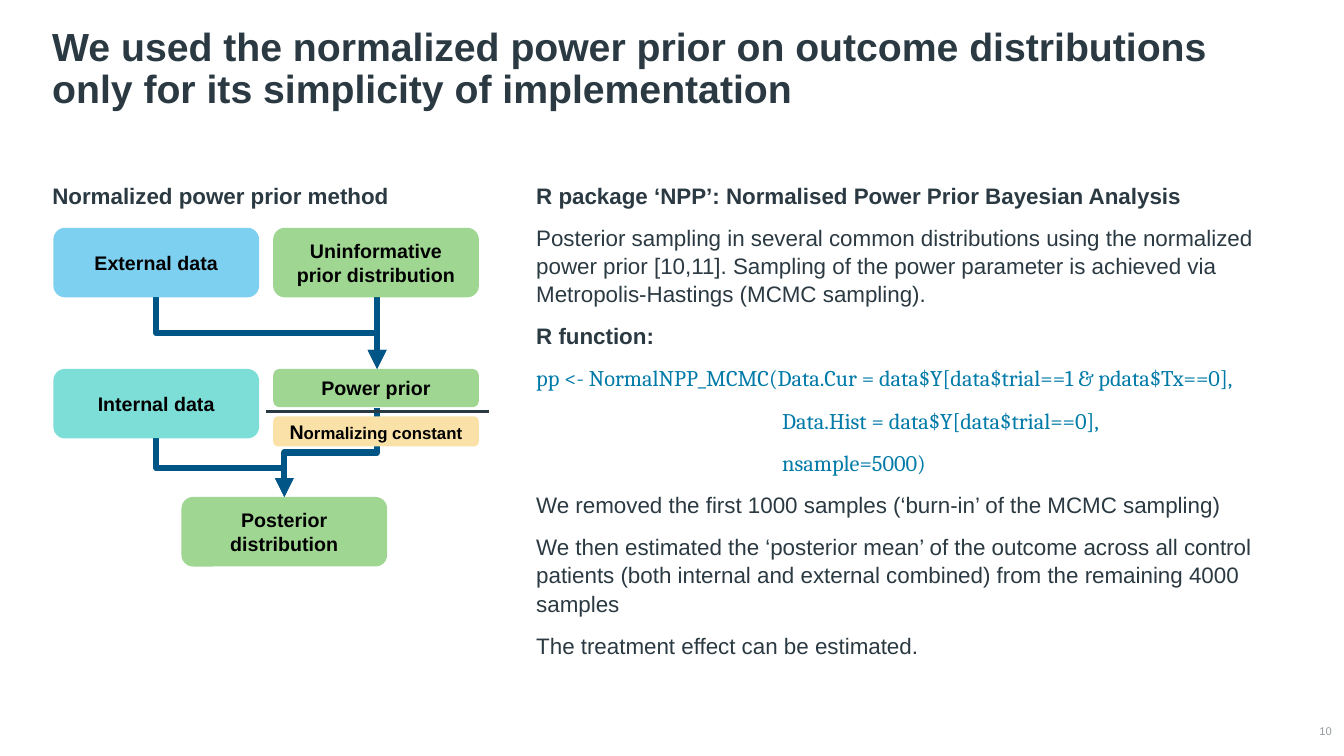
from typing import NamedTuple

from lxml import etree
from pptx import Presentation
from pptx import util as u
from pptx.dml.color import RGBColor
from pptx.enum import shapes, text
from pptx.oxml.ns import qn

INK, CODE, ARROW = "2B3A42", "007AA8", "005587"
BLUE, GREEN, TEAL, SAND = "00A3E0", "43B02A", "00BFB3", "F9E1A7"
BOX_WIDTH, BOX_HEIGHT = 2.04, 0.69
LEFT_COLUMN, RIGHT_COLUMN = 0.53, 2.71
LEFT_AXIS, RIGHT_AXIS, POSTERIOR_AXIS = 1.55, 3.74, 2.82
DATA_TOP, PRIOR_TOP, POSTERIOR_TOP = 2.26, 3.66, 4.93


class Run(NamedTuple):
    words: str
    size: float = 16
    bold: bool = False
    color: str = INK
    font: str = "Arial"


class Line(NamedTuple):
    runs: list[Run]
    indent: float = 0


class Box(NamedTuple):
    runs: list[Run]
    left: float
    top: float
    color: str
    height: float = BOX_HEIGHT
    opacity: int = 51


class Arrow(NamedTuple):
    start: tuple[float, float]
    end: tuple[float, float]


def rgb(color: str) -> RGBColor:
    return RGBColor.from_string(color)


def write(frame, lines: list[Line], *, align=text.PP_ALIGN.LEFT,
          anchor=text.MSO_ANCHOR.TOP, spacing: float = 1, before: float = 0) -> None:
    frame.word_wrap = True
    frame.vertical_anchor = anchor
    for index, line in enumerate(lines):
        paragraph = frame.add_paragraph() if index else frame.paragraphs[0]
        paragraph.alignment = align
        paragraph.line_spacing = spacing
        if index:
            paragraph.space_before = u.Pt(before)
        if line.indent:
            paragraph._p.get_or_add_pPr().set("marL", str(u.Inches(line.indent)))
        for item in line.runs:
            run = paragraph.add_run()
            run.text = item.words
            run.font.size = u.Pt(item.size)
            run.font.bold = item.bold
            run.font.name = item.font
            run.font.color.rgb = rgb(item.color)


def add_text(slide, left: float, top: float, width: float, height: float,
             lines: list[Line], **layout):
    box = slide.shapes.add_textbox(*map(u.Inches, (left, top, width, height)))
    write(box.text_frame, lines, **layout)
    return box


def add_box(slide, box: Box) -> None:
    shape = slide.shapes.add_shape(
        shapes.MSO_SHAPE.ROUNDED_RECTANGLE,
        *map(u.Inches, (box.left, box.top, BOX_WIDTH, box.height)))
    shape.shadow.inherit = False
    shape.fill.solid()
    shape.fill.fore_color.rgb = rgb(box.color)
    shape.line.fill.background()
    if box.opacity < 100:
        color = shape._element.spPr.find(qn("a:solidFill"))[0]
        etree.SubElement(color, qn("a:alpha")).set("val", str(box.opacity * 1000))
    write(shape.text_frame, [Line(box.runs)], align=text.PP_ALIGN.CENTER,
          anchor=text.MSO_ANCHOR.MIDDLE)


def add_line(slide, kind, start: tuple[float, float], end: tuple[float, float],
             color: str, weight: float):
    connector = slide.shapes.add_connector(kind, *map(u.Inches, (*start, *end)))
    connector.line.color.rgb = rgb(color)
    connector.line.width = u.Pt(weight)
    etree.SubElement(connector._element.spPr, qn("a:effectLst"))
    return connector


def add_arrow(slide, arrow: Arrow) -> None:
    """Draw a downward arrow that leaves and arrives vertically."""
    (x1, y1), (x2, y2) = arrow.start, arrow.end
    if x1 == x2:
        connector = add_line(slide, shapes.MSO_CONNECTOR.STRAIGHT,
                             arrow.start, arrow.end, ARROW, 4.5)
    else:
        # A quarter turn about the centre swaps the two extents.
        x, y = (x1 + x2) / 2, (y1 + y2) / 2
        half_width, half_height = (y2 - y1) / 2, abs(x2 - x1) / 2
        connector = add_line(slide, shapes.MSO_CONNECTOR.ELBOW,
                             (x - half_width, y - half_height),
                             (x + half_width, y + half_height), ARROW, 4.5)
        frame = connector._element.spPr.find(qn("a:xfrm"))
        rightward = x2 > x1
        frame.set("rot", str((270 if rightward else 90) * 60000))
        if rightward:
            frame.set("flipH", "1")
    outline = connector._element.spPr.find(qn("a:ln"))
    etree.SubElement(outline, qn("a:tailEnd")).set("type", "triangle")


def label(words: str) -> list[Run]:
    return [Run(words, 14, True, "000000")]


def heading(words: str) -> Line:
    return Line([Run(words, bold=True)])


def body(words: str) -> Line:
    return Line([Run(words)])


def code(words: str, indent: float = 0) -> Line:
    return Line([Run(words, color=CODE, font="Cambria")], indent)


TITLE = ("We used the normalized power prior on outcome distributions "
         "only for its simplicity of implementation")
EXPLANATION = [
    heading("R package ‘NPP’: Normalised Power Prior Bayesian Analysis"),
    body("Posterior sampling in several common distributions using the normalized "
         "power prior [10,11]. Sampling of the power parameter is achieved via "
         "Metropolis-Hastings (MCMC sampling)."),
    heading("R function:"),
    code("pp <- NormalNPP_MCMC(Data.Cur = data$Y[data$trial==1 & pdata$Tx==0],"),
    code("Data.Hist = data$Y[data$trial==0],", 2.44),
    code("nsample=5000)", 2.44),
    body("We removed the first 1000 samples (‘burn-in’ of the MCMC sampling)"),
    body("We then estimated the ‘posterior mean’ of the outcome across all control "
         "patients (both internal and external combined) from the remaining 4000 "
         "samples"),
    body("The treatment effect can be estimated."),
]
DATA_BOTTOM, PRIOR_BOTTOM = DATA_TOP + BOX_HEIGHT, PRIOR_TOP + BOX_HEIGHT
POSTERIOR_ENTRY = (POSTERIOR_AXIS, POSTERIOR_TOP)
ARROWS = [
    Arrow((LEFT_AXIS, DATA_BOTTOM), (RIGHT_AXIS, PRIOR_TOP)),
    Arrow((RIGHT_AXIS, DATA_BOTTOM), (RIGHT_AXIS, PRIOR_TOP)),
    Arrow((LEFT_AXIS, PRIOR_BOTTOM), POSTERIOR_ENTRY),
    Arrow((RIGHT_AXIS, 4.05), POSTERIOR_ENTRY),
]
BOXES = [
    Box(label("External data"), LEFT_COLUMN, DATA_TOP, BLUE),
    Box(label("Uninformative prior distribution"), RIGHT_COLUMN, DATA_TOP, GREEN),
    Box(label("Internal data"), LEFT_COLUMN, PRIOR_TOP, TEAL),
    Box(label("Power prior"), RIGHT_COLUMN, PRIOR_TOP, GREEN, height=0.38),
    Box(label("Posterior distribution"), 1.8, POSTERIOR_TOP, GREEN),
    Box(label("N") + [Run("ormalizing constant", 12, True, "000000")],
        RIGHT_COLUMN, 4.13, SAND, height=0.3, opacity=100),
]


def main() -> None:
    presentation = Presentation()
    presentation.slide_width = u.Inches(13.33)
    presentation.slide_height = u.Inches(7.5)
    slide = presentation.slides.add_slide(presentation.slide_layouts[6])

    add_text(slide, 0.42, 0.32, 12.4, 0.84, [Line([Run(TITLE, 28, True)])],
             anchor=text.MSO_ANCHOR.BOTTOM, spacing=0.9)
    add_text(slide, 0.42, 1.74, 4.69, 5.13,
             [heading("Normalized power prior method")], spacing=1.05)
    add_text(slide, 5.22, 1.74, 7.6, 5.13, EXPLANATION, spacing=1.05, before=10)
    number = add_text(slide, 12.82, 7.16, 0.39, 0.19,
                      [Line([Run("10", 8, color="959CA0")])],
                      align=text.PP_ALIGN.RIGHT, anchor=text.MSO_ANCHOR.MIDDLE)
    frame = number.text_frame
    frame.margin_left = frame.margin_right = frame.margin_top = frame.margin_bottom = 0

    for arrow in ARROWS:
        add_arrow(slide, arrow)
    for box in BOXES:
        add_box(slide, box)
    add_line(slide, shapes.MSO_CONNECTOR.STRAIGHT, (2.64, 4.08), (4.85, 4.08), INK, 2.25)

    presentation.save("out.pptx")


if __name__ == "__main__":
    main()
